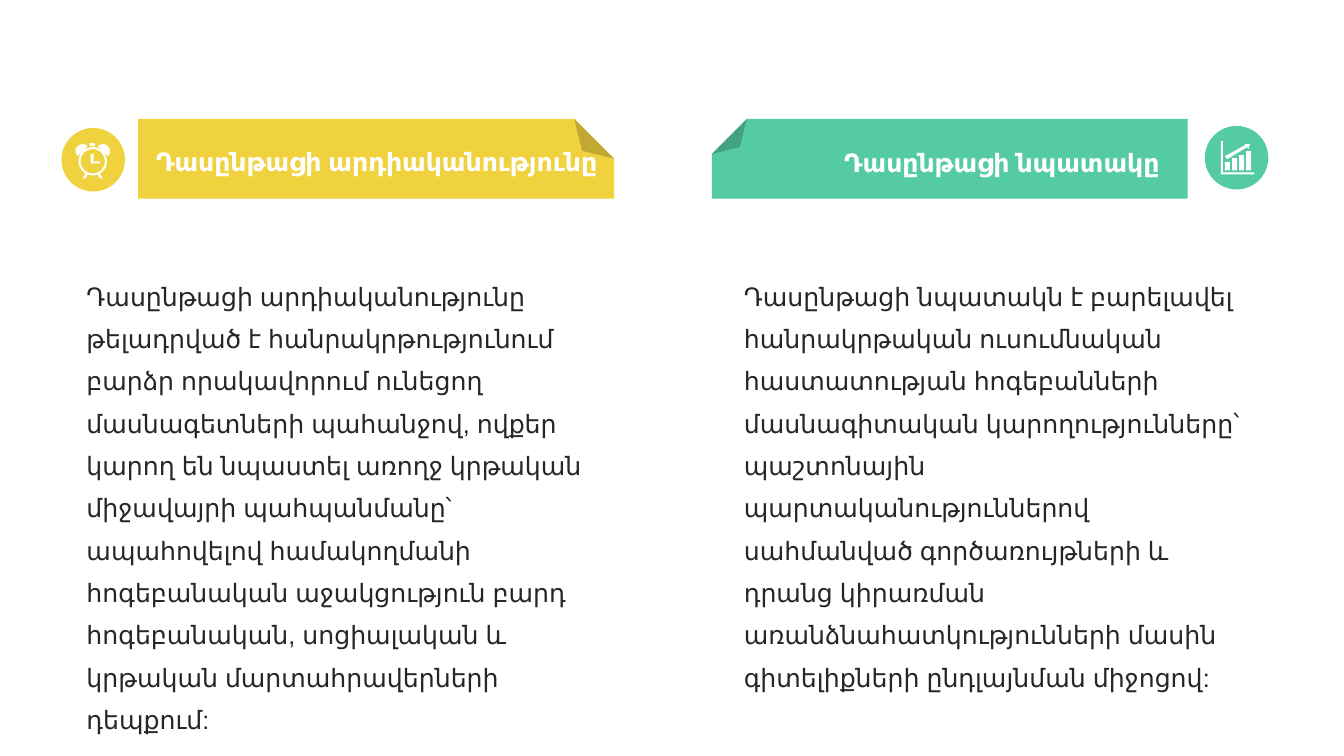
from math import cos, radians, sin

from lxml import etree
from pptx import Presentation
from pptx.dml.color import RGBColor
from pptx.enum.shapes import MSO_SHAPE
from pptx.enum.text import MSO_AUTO_SIZE, PP_ALIGN
from pptx.oxml.ns import qn
from pptx.util import Inches, Pt

FOLDED, OVAL = MSO_SHAPE.FOLDED_CORNER, MSO_SHAPE.OVAL
LEFT, RIGHT = PP_ALIGN.LEFT, PP_ALIGN.RIGHT
GROW = MSO_AUTO_SIZE.SHAPE_TO_FIT_TEXT

YELLOW, GREEN, WHITE, DARK = "F0D23F", "54CBA0", "FFFFFF", "262626"
BODY = {"name": "Arial", "size": Pt(18), "bold": False}
HEADING = {**BODY, "bold": True}

RELEVANCE = (
    "Դասընթացի արդիականությունը թելադրված է հանրակրթությունում բարձր "
    "որակավորում ունեցող մասնագետների պահանջով, ովքեր կարող են նպաստել "
    "առողջ կրթական միջավայրի պահպանմանը՝ ապահովելով համակողմանի "
    "հոգեբանական աջակցություն բարդ հոգեբանական, սոցիալական և կրթական "
    "մարտահրավերների դեպքում:"
)
GOAL = (
    "Դասընթացի նպատակն է բարելավել հանրակրթական ուսումնական հաստատության "
    "հոգեբանների մասնագիտական կարողությունները՝ պաշտոնային "
    "պարտականություններով սահմանված գործառույթների և դրանց կիրառման "
    "առանձնահատկությունների մասին գիտելիքների ընդլայնման միջոցով:"
)


def rgb(value):
    return RGBColor.from_string(value)


def paint(sp, color):
    sp.shadow.inherit = False
    sp.fill.solid()
    sp.fill.fore_color.rgb = rgb(color)
    sp.line.fill.background()


def add_shape(s, kind, box, color):
    sp = s.shapes.add_shape(kind, *map(Inches, box))
    paint(sp, color)
    return sp


def add_banner(s, left, color, fold, flips):
    sp = add_shape(s, FOLDED, (left, 1.18, 4.72, 0.79), color)
    spPr = sp._element.spPr
    # The fold size has no entry in sp.adjustments
    guides = spPr.find(qn("a:prstGeom")).find(qn("a:avLst"))
    etree.SubElement(guides, qn("a:gd"), name="adj",
                     fmla=f"val {round(fold * 100000)}")
    for flip in flips:
        spPr.find(qn("a:xfrm")).set(flip, "1")


def add_text(s, box, text, font, color, spacing, align=LEFT):
    tf = s.shapes.add_textbox(*map(Inches, box)).text_frame
    tf.word_wrap = True
    tf.auto_size = GROW
    p = tf.paragraphs[0]
    p.alignment, p.line_spacing = align, spacing
    r = p.add_run()
    r.text = text
    for name, value in font.items():
        setattr(r.font, name, value)
    r.font.color.rgb = rgb(color)


def add_icon(s, contours):
    """Draw closed contours, given in inches, as one white outline."""
    contours = [[(Inches(x), Inches(y)) for x, y in c] for c in contours]
    fb = s.shapes.build_freeform(*contours[0][0])
    for i, (first, *rest) in enumerate(contours):
        if i:
            fb.move_to(*first)
        fb.add_line_segments(rest, close=True)
    paint(fb.convert_to_shape(), WHITE)


def arc(cx, cy, radius, start, end, step=6):
    return [(cx + radius * cos(radians(a)), cy + radius * sin(radians(a)))
            for a in range(start, end + 1, step)]


def rect(left, top, right, bottom):
    return [(left, top), (right, top), (right, bottom), (left, bottom)]


def clock_contours():
    cx, cy = 0.92, 1.60
    leg = [(0.99, 1.72), (1.02, 1.77), (0.99, 1.77), (0.97, 1.73)]
    halves = [arc(1.02, 1.50, 0.07, -135, 45), leg]
    mirrored = [[(2 * cx - x, y) for x, y in half] for half in halves]
    hands = [(0.90, 1.53), (0.93, 1.53), (0.93, 1.60),
             (0.99, 1.60), (0.99, 1.62), (0.90, 1.62)]
    rings = [arc(cx, cy, radius, 0, 354) for radius in (0.14, 0.12)]
    return [*rings, *halves, *mirrored, hands, rect(0.89, 1.42, 0.94, 1.45)]


def growth_contours():
    tops = (1.61, 1.57, 1.54, 1.50)
    lefts = [12.15 + 0.07 * i for i in range(len(tops))]
    bars = [rect(x, top, x + 0.05, 1.69) for x, top in zip(lefts, tops)]
    arrow = [(12.35, 1.43), (12.40, 1.43), (12.38, 1.48), (12.37, 1.46),
             (12.17, 1.58), (12.15, 1.55), (12.35, 1.44)]
    axes = [(12.11, 1.40), (12.13, 1.40), (12.13, 1.71),
            (12.44, 1.71), (12.44, 1.73), (12.11, 1.73)]
    return [*bars, arrow, axes]


def main():
    prs = Presentation()
    prs.slide_width, prs.slide_height = Inches(13.33), Inches(7.5)
    s = prs.slides.add_slide(prs.slide_layouts[6])

    # Body texts
    add_text(s, (7.28, 2.62, 5.3, 3.45), GOAL, BODY, DARK, 1.4)
    add_text(s, (0.76, 2.62, 5.46, 3.45), RELEVANCE, BODY, DARK, 1.4)

    # Folded banners
    add_banner(s, 7.06, GREEN, 0.44, ("flipH", "flipV"))
    add_banner(s, 1.37, YELLOW, 0.5, ("flipV",))

    # Round icons
    add_shape(s, OVAL, (0.61, 1.27, 0.63, 0.63), YELLOW)
    add_icon(s, clock_contours())
    add_shape(s, OVAL, (11.95, 1.25, 0.63, 0.63), GREEN)
    add_icon(s, growth_contours())

    # Banner headings
    add_text(s, (6.62, 1.32, 4.98, 0.45), "Դասընթացի նպատակը",
             HEADING, WHITE, 1.3, RIGHT)
    add_text(s, (1.45, 1.31, 4.72, 0.85), "Դասընթացի արդիականությունը",
             HEADING, WHITE, 1.3)

    prs.save("out.pptx")


if __name__ == "__main__":
    main()
